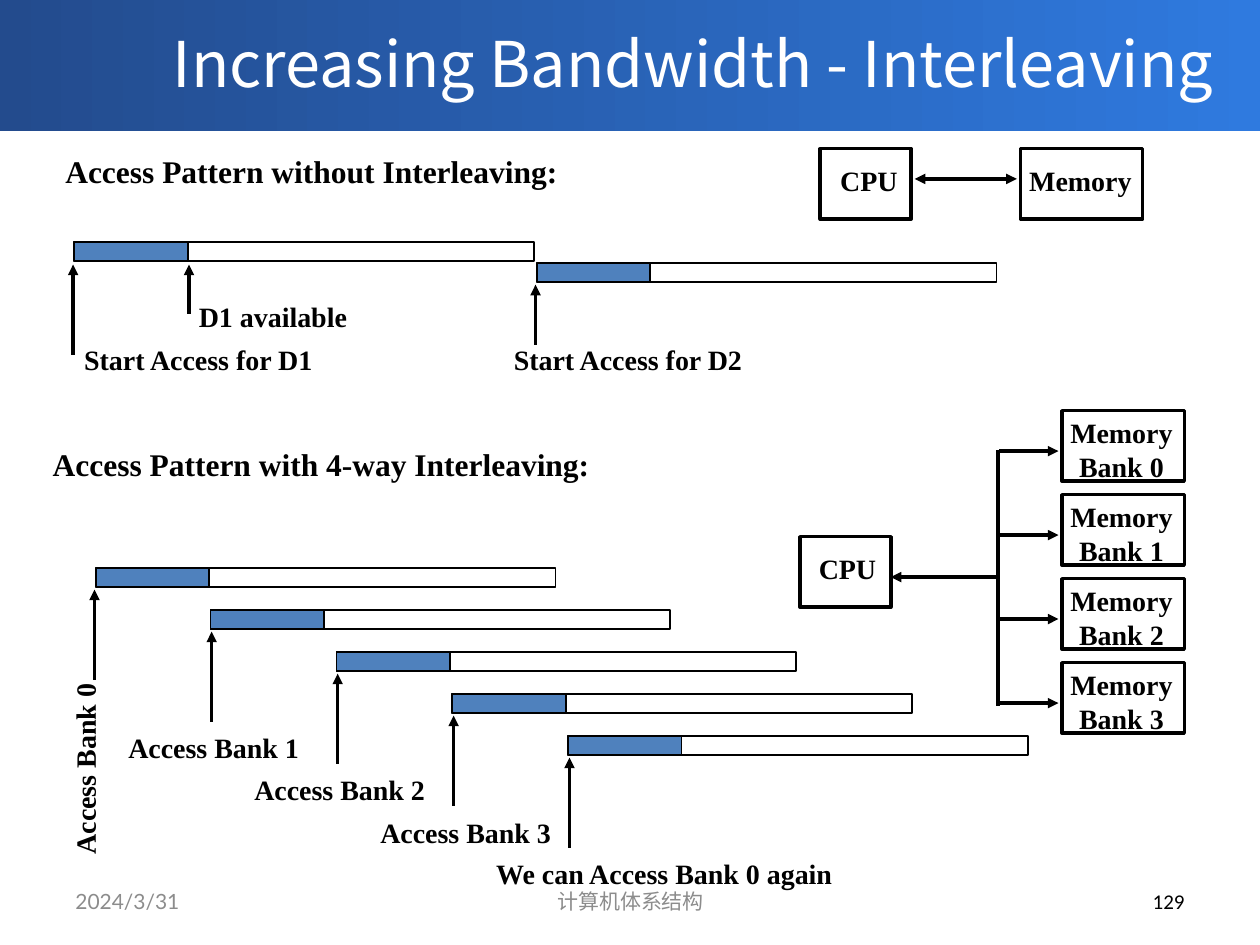
import pptx
import pptx.util
import pptx.dml.color
import pptx.enum.shapes
import pptx.enum.text
import lxml.etree
from pptx.util import Inches, Pt

BLACK = pptx.dml.color.RGBColor(0x00, 0x00, 0x00)
WHITE = pptx.dml.color.RGBColor(0xFF, 0xFF, 0xFF)
GRAY = pptx.dml.color.RGBColor(0x8C, 0x8C, 0x8C)
BAR_BLUE = pptx.dml.color.RGBColor(0x4F, 0x81, 0xBD)
BAND_DARK = pptx.dml.color.RGBColor(0x23, 0x4B, 0x8D)
BAND_LIGHT = pptx.dml.color.RGBColor(0x2F, 0x7A, 0xDF)
RECTANGLE = pptx.enum.shapes.MSO_SHAPE.RECTANGLE
ALIGN = pptx.enum.text.PP_ALIGN
MIDDLE = pptx.enum.text.MSO_ANCHOR.MIDDLE

deck = pptx.Presentation()
deck.slide_width = Inches(10)
deck.slide_height = Inches(7.5)
page = deck.slides.add_slide(deck.slide_layouts[5])
shapes = page.shapes


def add_text(text, left, top, width, height, size=16, font="Times New Roman",
             color=BLACK, bold=True, align=ALIGN.LEFT):
    box = shapes.add_textbox(Inches(left), Inches(top), Inches(width), Inches(height))
    box.text_frame.word_wrap = False
    box.text_frame.text = text
    for para in box.text_frame.paragraphs:
        para.alignment = align
        for span in para.runs:
            span.font.size = Pt(size)
            span.font.name = font
            span.font.bold = bold
            span.font.color.rgb = color
    return box


def add_line(x1, y1, x2, y2, *arrow_ends):
    line = shapes.add_connector(pptx.enum.shapes.MSO_CONNECTOR.STRAIGHT,
                                Inches(x1), Inches(y1), Inches(x2), Inches(y2))
    line.line.color.rgb = BLACK
    line.line.width = Pt(2)
    outline = line.line._get_or_add_ln()
    for end in arrow_ends:
        lxml.etree.SubElement(outline, pptx.oxml.ns.qn("a:" + end), type="triangle")
    properties = line._element.spPr
    lxml.etree.SubElement(properties, pptx.oxml.ns.qn("a:effectLst"))


band = shapes.add_shape(RECTANGLE, 0, Inches(-0.03), Inches(10), Inches(1.07))
band.shadow.inherit = False
band.line.fill.background()
band.fill.gradient()
band.fill.gradient_angle = 0
for stop, color in zip(band.fill.gradient_stops, (BAND_DARK, BAND_LIGHT)):
    stop.color.rgb = color
shapes._spTree.insert(2, band._element)

title = shapes.title
title.left, title.top, title.width, title.height = Inches(1), 0, Inches(9), Inches(0.99)
title.text_frame.text = "Increasing Bandwidth - Interleaving"
title.text_frame.vertical_anchor = MIDDLE
title_para = title.text_frame.paragraphs[0]
title_para.alignment = ALIGN.CENTER
title_span = title_para.runs[0]
title_span.font.size = Pt(36)
title_span.font.name = "Noto Sans CJK SC"
title_span.font.color.rgb = WHITE

bank_step = 2 / 3
bank_tops = [3.26 + bank_step * bank for bank in range(4)]
interleaved_bars = [(left, 4.51 + row / 3)
                    for row, left in enumerate((0.76, 1.67, 2.67, 3.59, 4.51))]

rectangles = []
for left, top in [(0.59, 1.92), (4.26, 2.09)] + interleaved_bars:
    rectangles.append((left, top, 0.9, 0.15, BAR_BLUE, 1))
    rectangles.append((left, top, 3.65, 0.15, None, 1))
for left, top in [(6.51, 1.18), (6.35, 4.26)]:
    rectangles.append((left, top, 0.72, 0.56, None, 2))
for left, top in [(8.1, 1.18)] + [(8.43, top) for top in bank_tops]:
    rectangles.append((left, top, 0.97, 0.56, None, 2))

for left, top, width, height, fill, weight in rectangles:
    frame = shapes.add_shape(RECTANGLE, Inches(left), Inches(top), Inches(width), Inches(height))
    frame.shadow.inherit = False
    frame.line.color.rgb = BLACK
    frame.line.width = Pt(weight)
    if fill is None:
        frame.fill.background()
    else:
        frame.fill.solid()
        frame.fill.fore_color.rgb = fill

add_text("Access Pattern without Interleaving:", 0.42, 1.16, 4.15, 0.4, 18)
add_text("Access Pattern with 4-way Interleaving:", 0.32, 3.48, 4.51, 0.4, 18)

for text, left, top, width in [
    ("Start Access for D1", 0.57, 2.67, 2.04),
    ("D1 available", 1.48, 2.33, 1.39),
    ("Start Access for D2", 3.98, 2.67, 2.04),
    ("CPU", 6.57, 1.25, 0.66),
    ("Memory", 8.07, 1.25, 1.02),
    ("CPU", 6.4, 4.33, 0.66),
    ("Access Bank 1", 0.92, 5.75, 1.57),
    ("Access Bank 2", 1.92, 6.08, 1.57),
    ("Access Bank 3", 2.92, 6.42, 1.57),
    ("We can Access Bank 0 again", 3.84, 6.75, 2.9),
]:
    add_text(text, left, top, width, 0.37)
add_text("Access Bank 0", -0.11, 5.91, 1.57, 0.37).rotation = 270

for x, top, bottom in [(0.58, 2.1, 2.82), (1.5, 2.1, 2.49), (4.25, 2.26, 2.74)]:
    add_line(x, top, x, bottom, "headEnd")
for row, x in enumerate((0.75, 1.68, 2.68, 3.6, 4.52)):
    top = 4.68 + row / 3
    add_line(x, top, x, top + 0.72, "headEnd")

add_line(7.26, 1.42, 8.07, 1.42, "headEnd", "tailEnd")
add_line(7.92, 5.6, 7.92, 3.57)
add_line(7.93, 4.58, 7.07, 4.58, "tailEnd")
for bank, top in enumerate(bank_tops):
    add_text(f"Memory\nBank {bank}", 8.39, top - 0.01, 1.02, 0.64, align=ALIGN.CENTER)
    add_line(7.93, top + 0.32, 8.4, top + 0.32, "tailEnd")

for text, left, width, font, color, align in [
    ("2024/3/31", 0.5, 2.33, "Lato", GRAY, ALIGN.LEFT),
    ("计算机体系结构", 3.42, 3.17, "Lato", GRAY, ALIGN.CENTER),
    ("129", 7.17, 2.33, "Calibri", BLACK, ALIGN.RIGHT),
]:
    footer = add_text(text, left, 6.95, width, 0.4, 12, font, color, False, align)
    footer.text_frame.word_wrap = True
    footer.text_frame.vertical_anchor = MIDDLE

deck.save("out.pptx")
